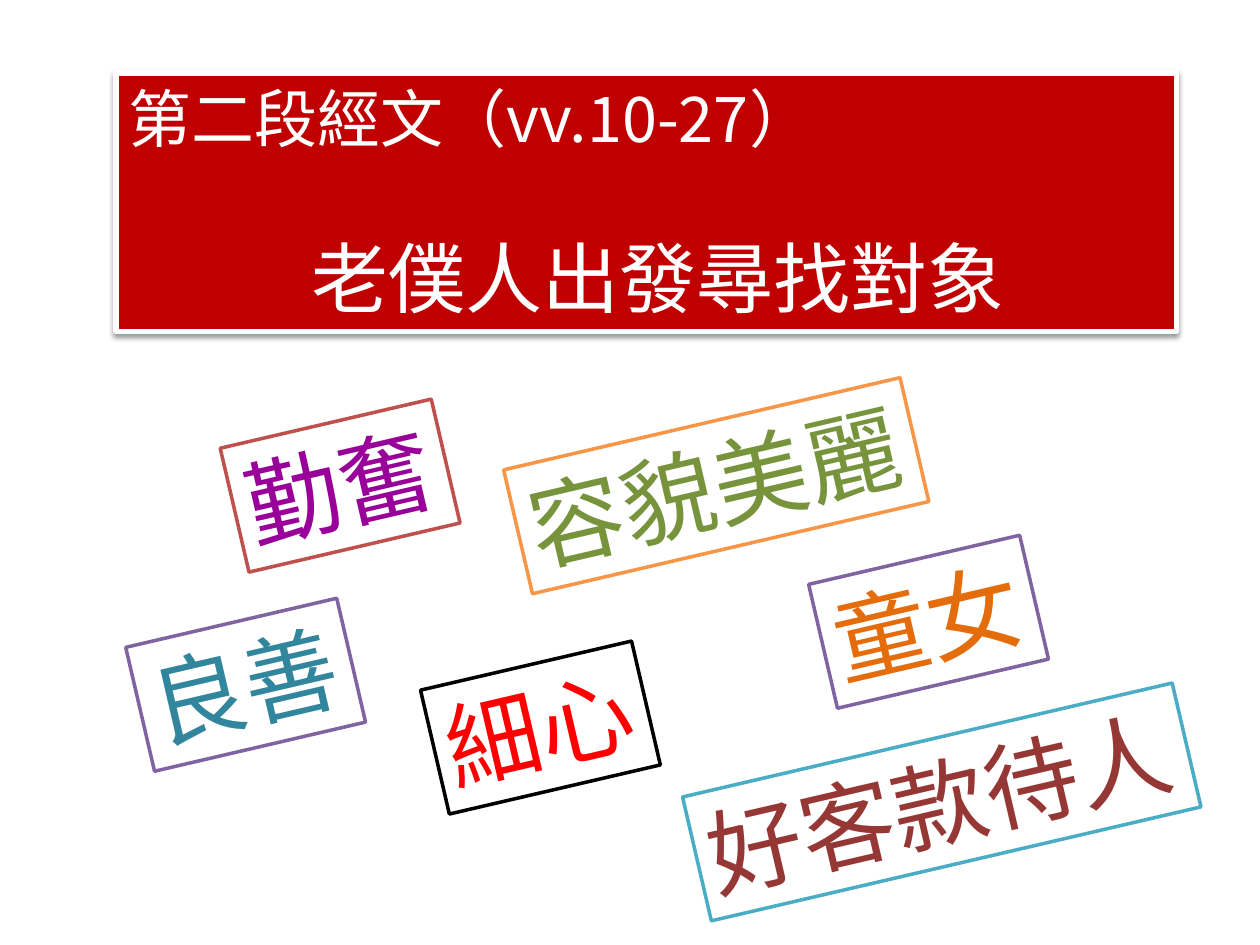
from pptx import Presentation
from pptx import util as u
from pptx.dml.color import RGBColor
from pptx.enum import shapes, text
from pptx.oxml import parse_xml
from pptx.oxml.ns import nsdecls, qn

FACE = "Noto Sans CJK TC"
TILT = 346.9
HEX = {
    "white": "FFFFFF", "black": "000000", "crimson": "C00000",
    "brick": "C0504D", "plum": "990099", "violet": "8064A2",
    "teal": "31859C", "red": "FF0000", "amber": "F79646",
    "olive": "77933C", "orange": "E46C0A", "aqua": "4BACC6",
    "maroon": "953735",
}
# Virtue: wording, left, top, width, border, text colour
TAGS = [
    ("勤奮", 1.84, 3.35, 1.72, "brick", "plum"),
    ("良善", 1.09, 4.93, 1.72, "violet", "teal"),
    ("細心", 3.43, 5.27, 1.72, "black", "red"),
    ("容貌美麗", 4.07, 3.35, 3.23, "amber", "olive"),
    ("童女", 6.51, 4.43, 1.72, "violet", "orange"),
    ("好客款待人", 5.48, 5.86, 3.99, "aqua", "maroon"),
]


def tint(name):
    return RGBColor.from_string(HEX[name])


def place(shape, *box):
    shape.left, shape.top, shape.width, shape.height = map(u.Inches, box)


def paint(shape, fill, line, width):
    shape.fill.solid()
    shape.fill.fore_color.rgb = tint(fill)
    shape.line.color.rgb = tint(line)
    shape.line.width = u.Pt(width)


def style(para, size, color):
    para.alignment = text.PP_ALIGN.LEFT
    font = para.font
    font.size, font.name = u.Pt(size), FACE
    font.color.rgb = tint(color)
    props = para._p.pPr.find(qn("a:defRPr"))
    props.append(parse_xml(f'<a:ea {nsdecls("a")} typeface="{FACE}"/>'))


def shade(shape):
    shape._element.spPr.append(parse_xml(
        f'<a:effectLst {nsdecls("a")}>'
        f'<a:outerShdw blurRad="{u.Pt(3.1)}" dist="{u.Pt(1.6)}" dir="5400000" rotWithShape="0">'
        f'<a:srgbClr val="{HEX["black"]}"><a:alpha val="38000"/></a:srgbClr>'
        '</a:outerShdw></a:effectLst>'))


def banner(slide):
    title = slide.shapes.title
    place(title, 0.92, 0.58, 8.42, 2.05)
    paint(title, "crimson", "white", 3)
    shade(title)
    frame = title.text_frame
    frame.auto_size = text.MSO_AUTO_SIZE.NONE
    frame.vertical_anchor = text.MSO_ANCHOR.TOP
    head = frame.paragraphs[0]
    head.text = "第二段經文（vv.10-27）"
    style(head, 36, "white")
    theme = frame.add_paragraph()
    theme.text = "老僕人出發尋找對象"
    theme.space_before = u.Pt(43)
    style(theme, 44, "white")
    theme._p.pPr.set("marL", str(u.Inches(1.45)))


def tag(slide, word, left, top, width, line, color):
    box = slide.shapes.add_shape(shapes.MSO_SHAPE.RECTANGLE, 0, 0, 0, 0)
    place(box, left, top, width, 1.01)
    box.rotation = TILT
    box.shadow.inherit = False
    paint(box, "white", line, 2)
    frame = box.text_frame
    frame.word_wrap = False
    frame.vertical_anchor = text.MSO_ANCHOR.TOP
    para = frame.paragraphs[0]
    para.text = word
    style(para, 54, color)


def main():
    deck = Presentation()
    deck.slide_width, deck.slide_height = u.Inches(10), u.Inches(7.5)
    slide = deck.slides.add_slide(deck.slide_layouts[5])  # title only
    banner(slide)
    for item in TAGS:
        tag(slide, *item)
    deck.save("out.pptx")


if __name__ == "__main__":
    main()
